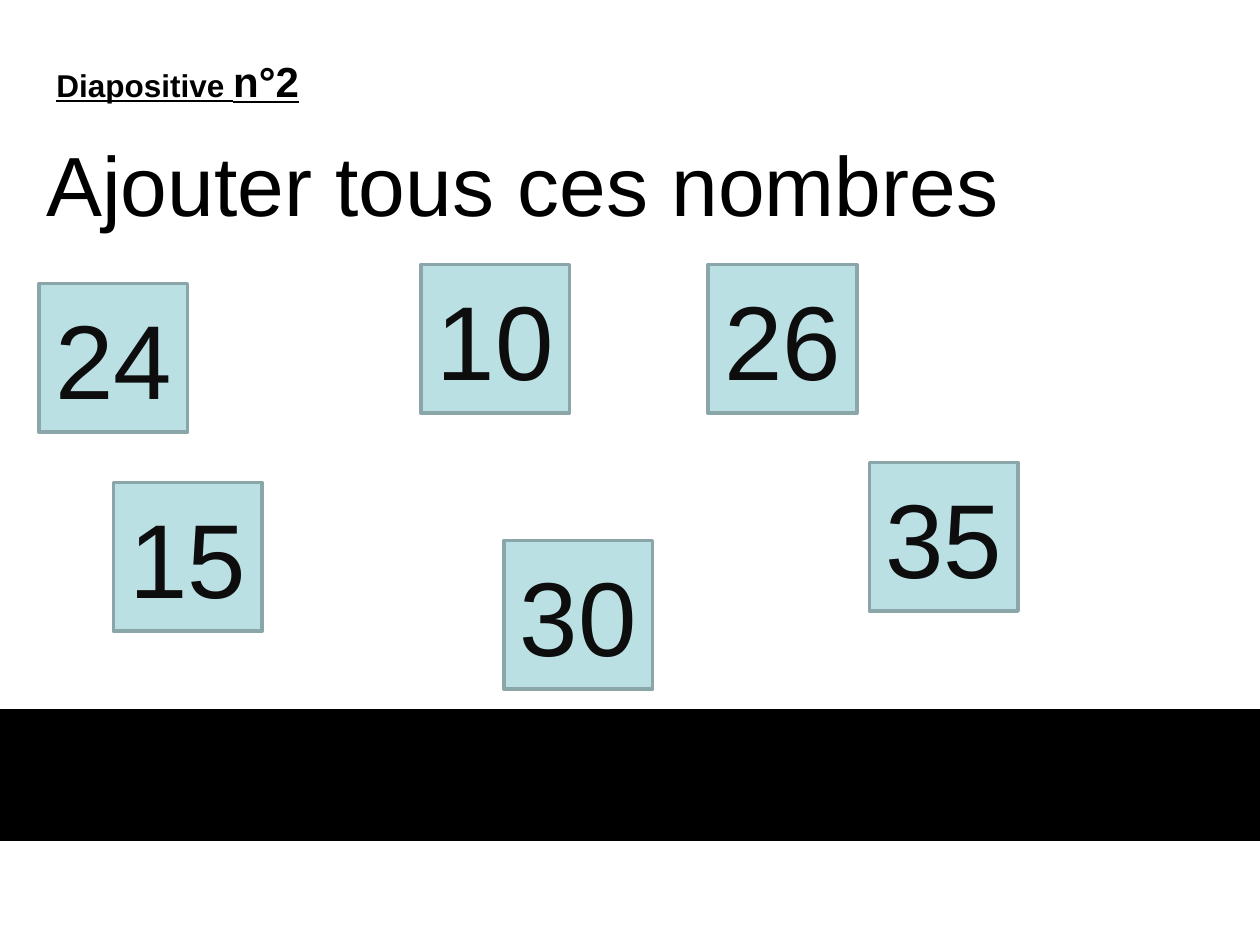
from pptx import Presentation
from pptx.dml.color import RGBColor
from pptx.enum import shapes, text
from pptx.util import Inches, Pt

BLACK = RGBColor(0x00, 0x00, 0x00)
INK = RGBColor(0x0D, 0x0D, 0x0D)
WHITE = RGBColor(0xFF, 0xFF, 0xFF)
AQUA = RGBColor(0xBB, 0xE0, 0xE3)
EDGE = RGBColor(0x8A, 0xA6, 0xA8)

SIDE = 1.18
CARDS = [
    ("24", 0.31, 2.25),
    ("15", 0.9, 3.83),
    ("35", 6.9, 3.67),
    ("26", 5.62, 2.1),
    ("10", 3.34, 2.1),
    ("30", 4, 4.29),
]


def write(par, words, size=18, color=BLACK, bold=False, line=False):
    """Add one formatted run to a paragraph."""
    run = par.add_run()
    run.text = words
    font = run.font
    font.name, font.size = "Arial", Pt(size)
    font.bold, font.underline = bold, line
    font.color.rgb = color


def add_text(slide, left, top, width, height, anchor):
    """Add a wrapping text box and return its first paragraph."""
    box = slide.shapes.add_textbox(
        Inches(left), Inches(top), Inches(width), Inches(height))
    frame = box.text_frame
    frame.word_wrap = True
    frame.vertical_anchor = anchor
    return frame.paragraphs[0]


def add_rect(slide, left, top, width, height, fill, edge):
    rect = slide.shapes.add_shape(
        shapes.MSO_SHAPE.RECTANGLE,
        Inches(left), Inches(top), Inches(width), Inches(height))
    rect.shadow.inherit = False
    rect.fill.solid()
    rect.fill.fore_color.rgb = fill
    rect.line.color.rgb = edge
    rect.line.width = Pt(2)
    return rect


def add_card(slide, number, left, top):
    """Add a square that shows one number."""
    frame = add_rect(slide, left, top, SIDE, SIDE, AQUA, EDGE).text_frame
    frame.vertical_anchor = text.MSO_ANCHOR.MIDDLE
    par = frame.paragraphs[0]
    par.alignment = text.PP_ALIGN.CENTER
    write(par, number, size=60, color=INK)


def main():
    deck = Presentation()
    deck.slide_width, deck.slide_height = Inches(10), Inches(7.5)
    slide = deck.slides.add_slide(deck.slide_layouts[6])
    slide.background.fill.solid()
    slide.background.fill.fore_color.rgb = WHITE

    # Slide number heading
    par = add_text(slide, 0.35, 0.39, 4.8, 0.51, text.MSO_ANCHOR.TOP)
    write(par, "Diapositive ", bold=True, line=True)
    write(par, "n°2", size=24, bold=True, line=True)

    # Black band
    add_rect(slide, 0, 5.64, 10, 1.02, BLACK, BLACK)

    # Instruction
    par = add_text(slide, 0.27, 0.65, 8.5, 1.61, text.MSO_ANCHOR.MIDDLE)
    write(par, "Ajouter tous ces nombres", size=48)

    # Numbers to add
    for card in CARDS:
        add_card(slide, *card)

    deck.save("out.pptx")


if __name__ == "__main__":
    main()
